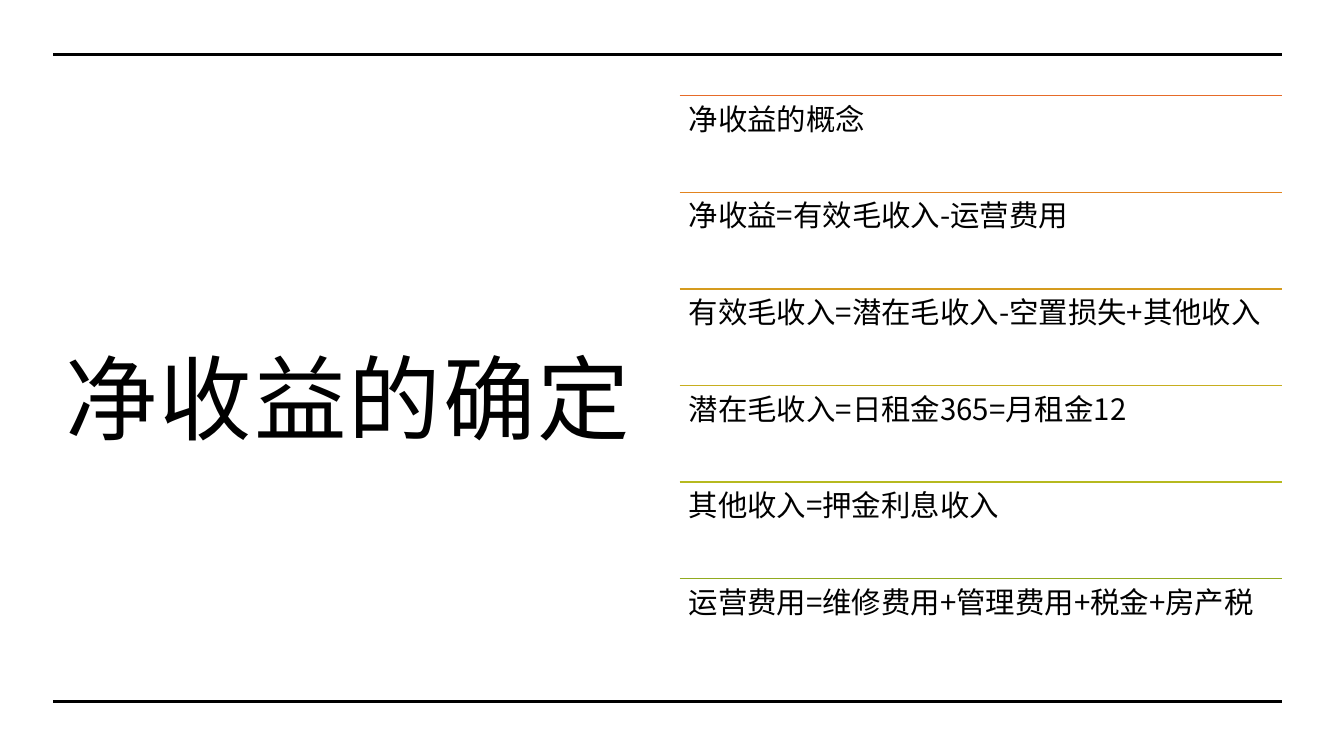
from dataclasses import dataclass

from lxml.etree import SubElement
from pptx import Presentation
from pptx.dml.color import RGBColor
from pptx.enum.shapes import MSO_CONNECTOR as Connector
from pptx.enum.text import MSO_ANCHOR as Anchor, MSO_AUTO_SIZE as AutoSize, PP_ALIGN as Align
from pptx.oxml.ns import qn
from pptx.util import Inches, Pt


@dataclass(frozen=True)
class Theme:
    font: str = "Noto Sans CJK SC"
    ink: str = "000000"
    title_size: float = 66
    item_size: float = 21
    frame_weight: float = 2.25
    item_weight: float = 1


theme = Theme()

ITEMS = [
    ("净收益的概念", "E66B29"),
    ("净收益=有效毛收入-运营费用", "E2841F"),
    ("有效毛收入=潜在毛收入-空置损失+其他收入", "D59B1E"),
    ("潜在毛收入=日租金365=月租金12", "C7AE1F"),
    ("其他收入=押金利息收入", "B6B91F"),
    ("运营费用=维修费用+管理费用+税金+房产税", "91AB1F"),
]

deck = Presentation()
deck.slide_width, deck.slide_height = Inches(13.33), Inches(7.5)
page = deck.slides.add_slide(deck.slide_layouts[5])

# Grid: two columns between the frame lines, one row per item
left, right = Inches(0.53), Inches(12.72)
top, bottom = Inches(0.95), Inches(6.7)
list_left = Inches(6.74)
title_width = Inches(6.14)
row_height = (bottom - top) // len(ITEMS)


def add_rule(shapes, start, y, color, weight):
    """Draw a horizontal line from start to the right margin."""
    rule = shapes.add_connector(Connector.STRAIGHT, start, y, right, y)
    rule.line.color.rgb = RGBColor.from_string(color)
    rule.line.width = Pt(weight)
    SubElement(rule._element.spPr, qn("a:effectLst"))


def write_text(box, text, size, frame_format, para_format):
    frame = box.text_frame
    for name, value in frame_format.items():
        setattr(frame, name, value)
    para = frame.paragraphs[0]
    for name, value in para_format.items():
        setattr(para, name, value)
    span = para.add_run()
    span.text = text
    for name, value in {"name": theme.font, "size": Pt(size)}.items():
        setattr(span.font, name, value)
    span.font.color.rgb = RGBColor.from_string(theme.ink)
    SubElement(span._r.get_or_add_rPr(), qn("a:ea"), typeface=theme.font)
    return span


title = page.shapes.title
title_place = {"left": left, "top": top, "width": title_width, "height": bottom - top}
for name, value in title_place.items():
    setattr(title, name, value)
title_frame = {
    "word_wrap": True,
    "auto_size": AutoSize.NONE,
    "vertical_anchor": Anchor.MIDDLE,
    "margin_left": Inches(0.12),
    "margin_top": Inches(0.12),
    "margin_right": Inches(0.12),
    "margin_bottom": Inches(0.1),
}
title_para = {"alignment": Align.LEFT, "line_spacing": 1.18}
title_span = write_text(title, "净收益的确定", theme.title_size, title_frame, title_para)
title_span._r.get_or_add_rPr().set("spc", "150")

for y in (Inches(0.54), Inches(6.96)):
    add_rule(page.shapes, left, y, theme.ink, theme.frame_weight)

item_frame = {"word_wrap": True, "vertical_anchor": Anchor.TOP}
for side in ("left", "top", "right", "bottom"):
    item_frame[f"margin_{side}"] = Inches(0.09)
item_para = {
    "alignment": Align.LEFT,
    "line_spacing": 0.9,
    "space_after": Pt(0.35 * theme.item_size),
}

item_list = page.shapes.add_group_shape()
for row, (text, color) in enumerate(ITEMS):
    y = top + row * row_height
    add_rule(item_list.shapes, list_left, y, color, theme.item_weight)
    box = item_list.shapes.add_textbox(list_left, y, right - list_left, row_height)
    write_text(box, text, theme.item_size, item_frame, item_para)

deck.save("out.pptx")
